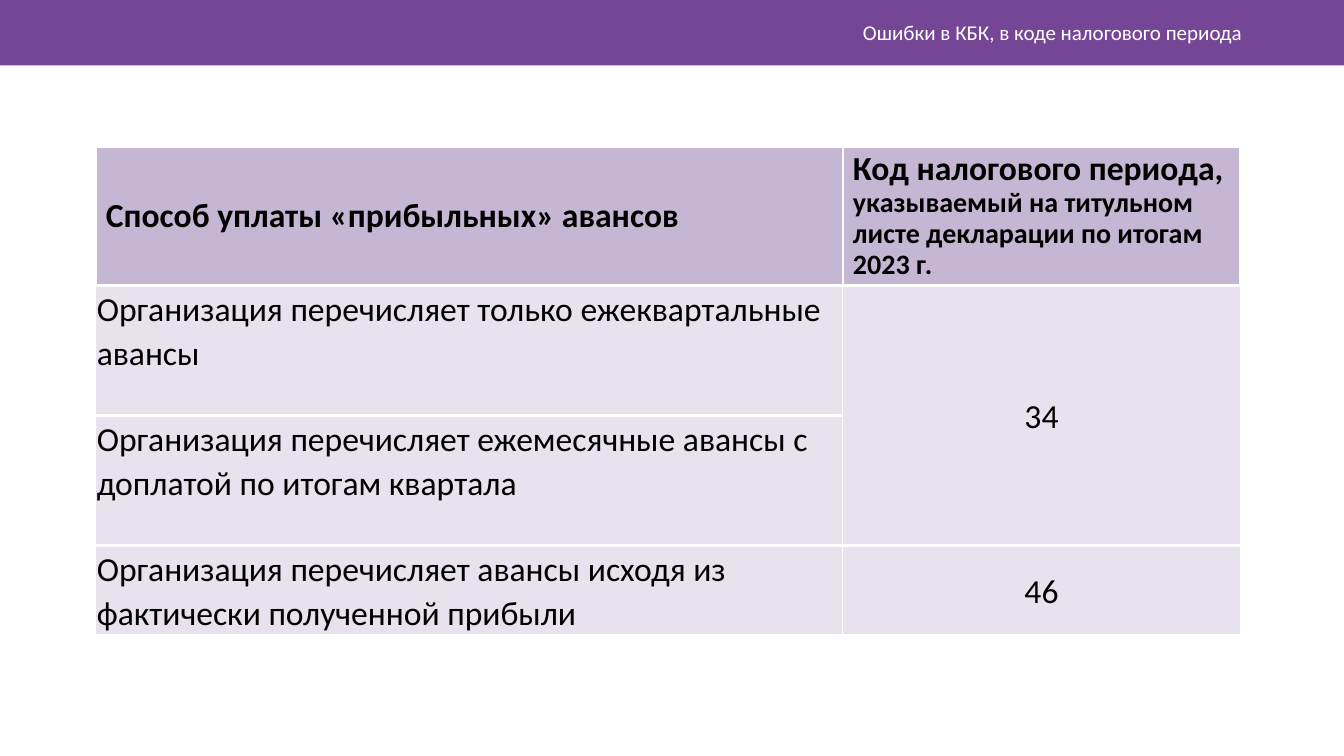
from dataclasses import dataclass

from lxml import etree
from pptx import Presentation, util as u
from pptx.dml.color import RGBColor
from pptx.enum import shapes, text
from pptx.oxml.ns import qn


@dataclass(frozen=True)
class Theme:
    font: str = "Calibri"
    band: str = "764696"
    tint: str = "8D6FAB"
    ink: str = "000000"
    paper: str = "FFFFFF"
    title_size: float = 15
    table_size: float = 24
    detail_size: float = 20
    header_opacity: int = 50
    body_opacity: int = 20
    thick_rule: float = 2.25
    thin_rule: float = 1


THEME = Theme()
WIDTH, HEIGHT = 13.33, 7.5
COLUMNS = (7.41, 3.94)
ROWS = (1.38, 1.29, 1.29, 0.87)
CELL_INSET = 0.01
HEADERS = (
    [("Способ уплаты «прибыльных» авансов", THEME.table_size)],
    [("Код налогового периода, ", THEME.table_size),
     ("указываемый на титульном листе декларации по итогам 2023 г.", THEME.detail_size)],
)
PAYMENT_METHODS = (
    "Организация перечисляет только ежеквартальные авансы",
    "Организация перечисляет ежемесячные авансы с доплатой по итогам квартала",
    "Организация перечисляет авансы исходя из фактически полученной прибыли",
)
PERIOD_CODES = ((1, 2, "34"), (3, 3, "46"))


def write(frame, runs, color=THEME.ink, bold=False, align=text.PP_ALIGN.LEFT, spacing=1.0):
    frame.word_wrap = True
    paragraph = frame.paragraphs[0]
    paragraph.alignment = align
    paragraph.line_spacing = spacing
    for wording, size in runs:
        run = paragraph.add_run()
        run.text = wording
        run.font.name = THEME.font
        run.font.size = u.Pt(size)
        run.font.bold = bold
        run.font.color.rgb = RGBColor.from_string(color)


def add_color(parent, color):
    fill = etree.SubElement(parent, qn("a:solidFill"))
    return etree.SubElement(fill, qn("a:srgbClr"), val=color)


def style_cell(cell, opacity, side_rule):
    properties = cell._tc.get_or_add_tcPr()
    rules = {"L": side_rule, "R": side_rule, "T": THEME.thick_rule, "B": THEME.thick_rule}
    for side, weight in rules.items():
        line = etree.SubElement(properties, qn(f"a:ln{side}"), w=str(u.Pt(weight)))
        add_color(line, THEME.paper)
    tint = add_color(properties, THEME.tint)
    etree.SubElement(tint, qn("a:alpha"), val=str(opacity * 1000))


def fill_cell(cell, runs, anchor=text.MSO_ANCHOR.MIDDLE, inset=None, **format):
    cell.vertical_anchor = anchor
    if inset is not None:
        cell.margin_left = cell.margin_right = u.Inches(inset)
        cell.margin_top = cell.margin_bottom = u.Inches(inset)
    write(cell.text_frame, runs, **format)


def add_band(slide):
    band = slide.shapes.add_shape(
        shapes.MSO_SHAPE.RECTANGLE, 0, 0, u.Inches(WIDTH), u.Inches(0.65))
    band.shadow.inherit = False
    band.fill.solid()
    band.fill.fore_color.rgb = RGBColor.from_string(THEME.band)
    band.line.fill.background()
    slide.shapes._spTree.insert(2, band._element)


def add_title(slide, wording):
    title = slide.shapes.title
    title.left, title.top = u.Inches(3.54), u.Inches(0.12)
    title.width, title.height = u.Inches(8.88), u.Inches(0.4)
    title.text_frame.auto_size = text.MSO_AUTO_SIZE.NONE
    title.text_frame.vertical_anchor = text.MSO_ANCHOR.MIDDLE
    write(title.text_frame, [(wording, THEME.title_size)],
          color=THEME.paper, align=text.PP_ALIGN.RIGHT)


def add_period_table(slide):
    table = slide.shapes.add_table(
        len(ROWS), len(COLUMNS), u.Inches(0.95), u.Inches(1.45),
        u.Inches(sum(COLUMNS)), u.Inches(sum(ROWS))).table
    for column, width in zip(table.columns, COLUMNS):
        column.width = u.Inches(width)
    for index, (row, height) in enumerate(zip(table.rows, ROWS)):
        row.height = u.Inches(height)
        for cell in row.cells:
            if index == 0:
                style_cell(cell, THEME.header_opacity, THEME.thick_rule)
            else:
                style_cell(cell, THEME.body_opacity, THEME.thin_rule)
    for column, runs in enumerate(HEADERS):
        fill_cell(table.cell(0, column), runs, bold=True, spacing=0.9)
    for row, method in enumerate(PAYMENT_METHODS, 1):
        fill_cell(table.cell(row, 0), [(method, THEME.table_size)],
                  anchor=text.MSO_ANCHOR.TOP, inset=CELL_INSET, spacing=1.07)
    for first, last, code in PERIOD_CODES:
        cell = table.cell(first, 1)
        if last > first:
            cell.merge(table.cell(last, 1))
        fill_cell(cell, [(code, THEME.table_size)], inset=CELL_INSET,
                  align=text.PP_ALIGN.CENTER, spacing=1.07)


def main():
    deck = Presentation()
    deck.slide_width, deck.slide_height = u.Inches(WIDTH), u.Inches(HEIGHT)
    slide = deck.slides.add_slide(deck.slide_layouts[5])
    add_band(slide)
    add_title(slide, "Ошибки в КБК, в коде налогового периода")
    add_period_table(slide)
    deck.save("out.pptx")


if __name__ == "__main__":
    main()
